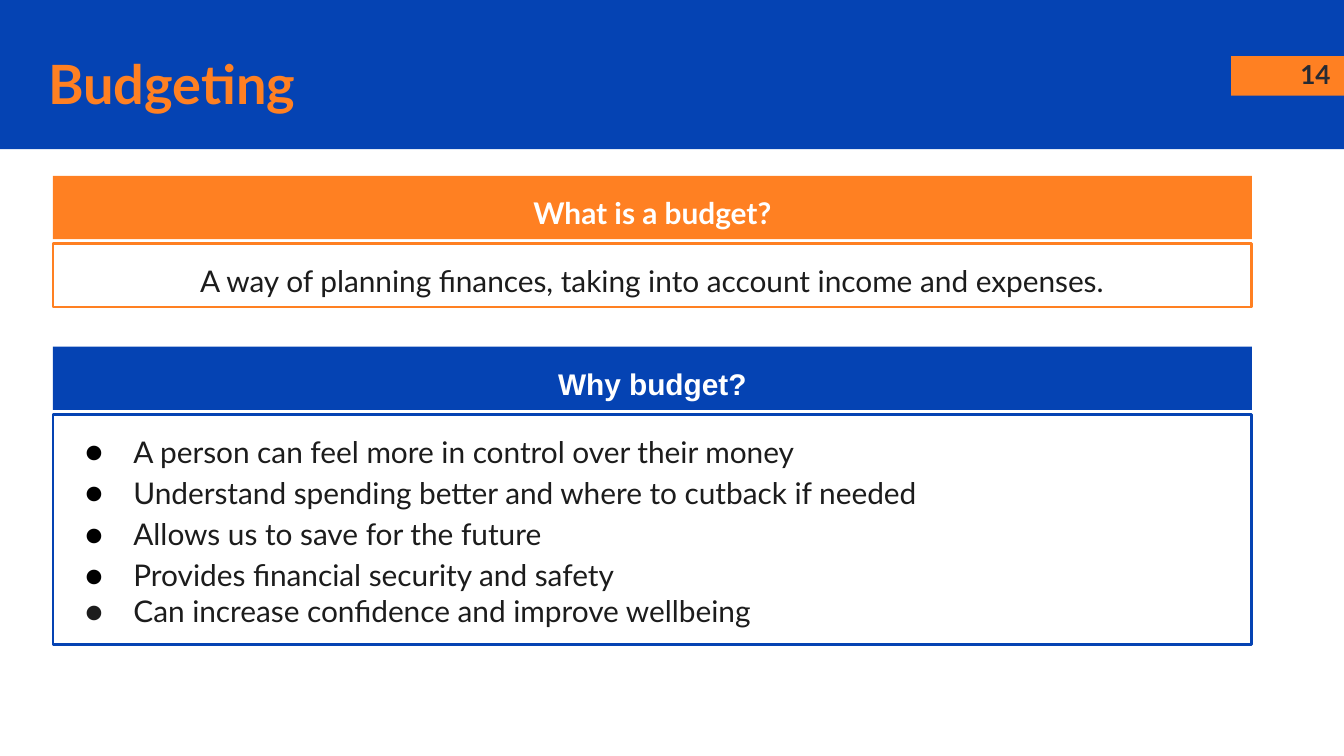
"""Build the budgeting slide with two headed panels."""
from lxml import etree
from pptx import Presentation
from pptx.dml.color import RGBColor
from pptx.enum.shapes import MSO_SHAPE
from pptx.enum.text import MSO_ANCHOR, MSO_AUTO_SIZE, PP_ALIGN
from pptx.oxml.ns import qn
from pptx.util import Inches, Pt

RECT = MSO_SHAPE.RECTANGLE
TOP = MSO_ANCHOR.TOP
FIT, FIXED = MSO_AUTO_SIZE.SHAPE_TO_FIT_TEXT, MSO_AUTO_SIZE.NONE
LEFT, MID, RIGHT = PP_ALIGN.LEFT, PP_ALIGN.CENTER, PP_ALIGN.RIGHT
BLUE = RGBColor(0x05, 0x43, 0xB3)
ORANGE = RGBColor(0xFF, 0x80, 0x22)
WHITE = RGBColor(0xFF, 0xFF, 0xFF)
INK = RGBColor(0x1C, 0x1C, 0x1C)
SLATE = RGBColor(0x26, 0x2A, 0x33)
BLACK = RGBColor(0, 0, 0)

deck = Presentation()
deck.slide_width = Inches(10)
deck.slide_height = deck.slide_width * 9 // 16
slide = deck.slides.add_slide(deck.slide_layouts[6])
CELL = deck.slide_width / 100


def block(x, y, w, h, fill=None, edge=None):
    spot = [round(n * CELL) for n in (x, y, w, h)]
    shape = slide.shapes.add_shape(RECT, *spot)
    shape.shadow.inherit = False
    if fill is None:
        shape.fill.background()
    else:
        shape.fill.solid()
        shape.fill.fore_color.rgb = fill
    if edge is None:
        shape.line.fill.background()
    else:
        shape.line.color.rgb = edge
        shape.line.width = Pt(1.5)
    return shape


def write(shape, text, size, color, align=MID, bold=False, face="Lato", fit=FIT):
    frame = shape.text_frame
    frame.text = text
    frame.word_wrap = True
    frame.auto_size = fit
    frame.vertical_anchor = TOP
    frame.margin_left = frame.margin_right = round(CELL)
    frame.margin_top = frame.margin_bottom = round(CELL)
    for para in frame.paragraphs:
        para.alignment = align
        para.line_spacing = 1.15
        for run in para.runs:
            run.font.name, run.font.size = face, Pt(size)
            run.font.bold = bold
            run.font.color.rgb = color
    return frame.paragraphs


block(0, 0, 100, 11.1, BLUE)
block(91.6, 4.17, 8.4, 2.95, ORANGE)

title = slide.shapes.add_textbox(*[round(n * CELL) for n in (2.6, 2, 99.6, 6.9)])
write(title, "Budgeting", 29, ORANGE, LEFT, True)
page = slide.shapes.add_textbox(*[round(n * CELL) for n in (94, 3.35, 6, 4.3)])
write(page, "14", 14, SLATE, RIGHT, True, fit=FIXED)[0].line_spacing = 1.0

reasons = [
    "A person can feel more in control over their money",
    "Understand spending better and where to cutback if needed",
    "Allows us to save for the future",
    "Provides financial security and safety",
    "Can increase confidence and improve wellbeing",
]
meaning = "A way of planning finances, taking into account income and expenses."
panels = [
    ("What is a budget?", "Lato", ORANGE, 13.1, 4.7, None, meaning, MID),
    ("Why budget?", "Arial", BLUE, 25.8, 17.1, WHITE, "\n".join(reasons), LEFT),
]
for head, face, color, y, deep, fill, body, align in panels:
    write(block(3.94, y, 89.2, 4.7, color), head, 16, WHITE, MID, True, face)
    panel = block(3.94, y + 5.05, 89.2, deep, fill, color)
    lines = write(panel, body, 16, INK, align)

lines[-1].line_spacing = 1.0
for line in lines:
    props = line._p.get_or_add_pPr()
    props.set("marL", str(round(5 * CELL)))
    props.set("indent", str(round(-3.6 * CELL)))
    tint = etree.SubElement(props, qn("a:buClr"))
    shade = INK if line is lines[-1] else BLACK
    etree.SubElement(tint, qn("a:srgbClr")).set("val", str(shade))
    etree.SubElement(props, qn("a:buFont")).set("typeface", "Lato")
    etree.SubElement(props, qn("a:buChar")).set("char", "●")

deck.save("out.pptx")
